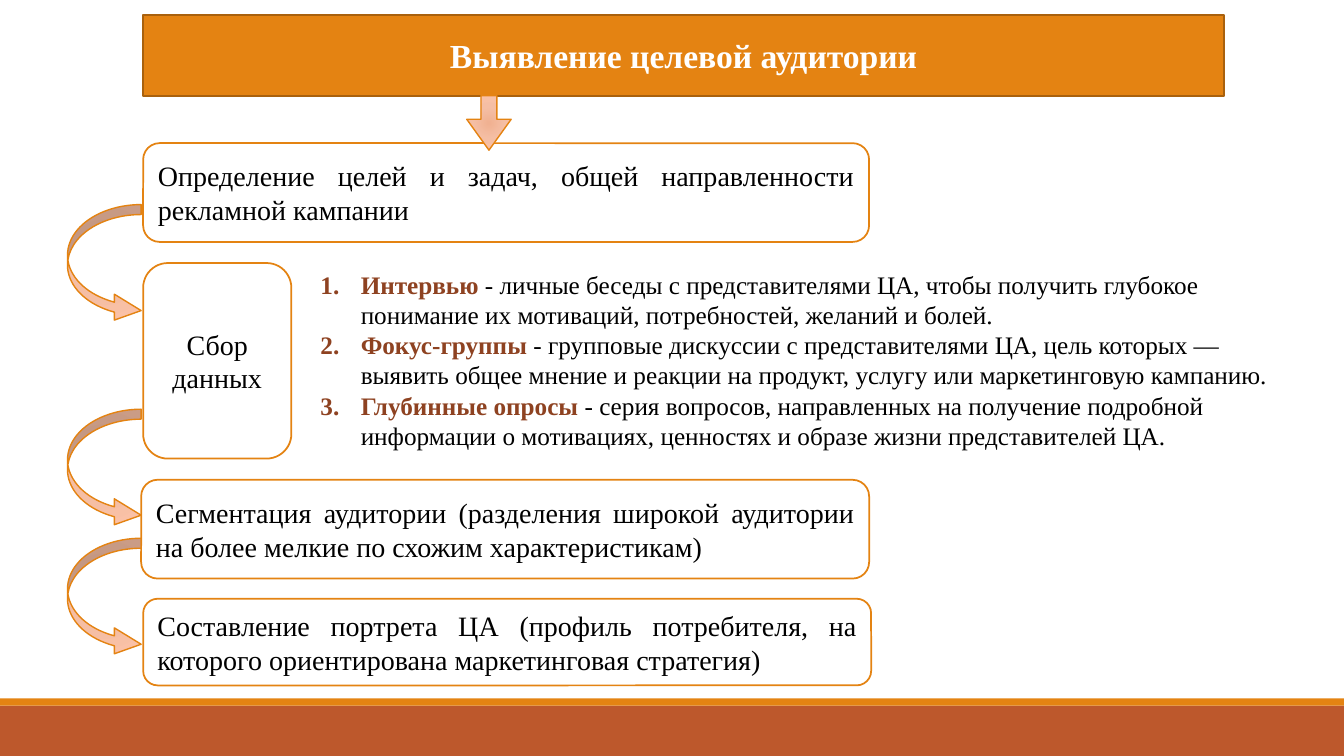
"""Build the slide on finding a target audience."""
from pptx import Presentation
from pptx.dml.color import RGBColor as RGB
from pptx.enum.shapes import MSO_SHAPE as Shape
from pptx.enum.text import MSO_ANCHOR as Anchor, PP_ALIGN as Align
from pptx.oxml import parse_xml
from pptx.util import Inches, Pt

WHITE = RGB(0xFF, 0xFF, 0xFF)
BLACK = RGB(0, 0, 0)
ORANGE = RGB(0xE4, 0x83, 0x12)
EDGE = RGB(0xA9, 0x61, 0x0D)
RUST = RGB(0xBD, 0x58, 0x2C)
BROWN = RGB(0x8E, 0x42, 0x21)
FONT = "Times New Roman"
NS = 'xmlns:a="http://schemas.openxmlformats.org/drawingml/2006/main"'
GLOW = f"""<a:gradFill {NS} rotWithShape="1"><a:gsLst>
<a:gs pos="0"><a:srgbClr val="F0B191"/></a:gs>
<a:gs pos="45000"><a:srgbClr val="F5BEA4"/></a:gs>
<a:gs pos="100000"><a:srgbClr val="FDC3A8"/></a:gs></a:gsLst>
<a:path path="circle"><a:fillToRect l="100000" t="100000" r="100000" b="100000"/></a:path>
</a:gradFill>"""


def write(para, text, size=20, color=BLACK, bold=False):
    run = para.add_run()
    run.text = text
    font = run.font
    font.name, font.size, font.bold = FONT, Pt(size), bold
    font.color.rgb = color


def draw(kind, box, fill=None, line=None, width=1.25):
    shape = slide.shapes.add_shape(kind, *map(Inches, box))
    shape.shadow.inherit = False
    if fill is None:
        shape._element.spPr.insert(2, parse_xml(GLOW))
    else:
        shape.fill.solid()
        shape.fill.fore_color.rgb = fill
    if line is None:
        shape.line.fill.background()
    else:
        shape.line.color.rgb = line
        shape.line.width = Pt(width)
    return shape


deck = Presentation()
deck.slide_width, deck.slide_height = Inches(13.33), Inches(7.5)
slide = deck.slides.add_slide(deck.slide_layouts[6])

draw(Shape.RECTANGLE, (0, 7, 13.33, 0.5), RUST)
draw(Shape.RECTANGLE, (0, 6.93, 13.33, 0.07), ORANGE)

methods = [
    ("Интервью ", "- личные беседы с представителями ЦА, чтобы получить глубокое понимание их мотиваций, потребностей, желаний и болей."),
    ("Фокус-группы ", "- групповые дискуссии с представителями ЦА, цель которых — выявить общее мнение и реакции на продукт, услугу или маркетинговую кампанию."),
    ("Глубинные опросы ", "- серия вопросов, направленных на получение подробной информации о мотивациях, ценностях и образе жизни представителей ЦА."),
]
frame = slide.shapes.add_textbox(
    Inches(3.08), Inches(2.62), Inches(9.73), Inches(1.92)).text_frame
frame.word_wrap = True
for i, (name, note) in enumerate(methods):
    para = frame.add_paragraph() if i else frame.paragraphs[0]
    props = para._p.get_or_add_pPr()
    props.set("marL", str(Inches(0.4)))
    props.set("indent", str(-Inches(0.4)))
    props.append(parse_xml(f'<a:buFont {NS} typeface="+mj-lt"/>'))
    props.append(parse_xml(f'<a:buAutoNum {NS} type="arabicPeriod"/>'))
    write(para, name, size=18, color=BROWN, bold=True)
    write(para, note, size=18)

title = draw(Shape.RECTANGLE, (1.42, 0.15, 10.72, 0.8), ORANGE, EDGE)
title.text_frame.vertical_anchor = Anchor.MIDDLE
para = title.text_frame.paragraphs[0]
para.alignment = Align.CENTER
write(para, "Выявление целевой аудитории", size=24, color=WHITE, bold=True)

steps = [
    ((1.42, 1.42, 7.2, 0.98), Align.JUSTIFY,
     "Определение целей и задач, общей направленности рекламной кампании"),
    ((1.42, 2.61, 1.47, 1.94), Align.CENTER, "Сбор данных"),
    ((1.4, 4.76, 7.22, 0.98), Align.JUSTIFY,
     "Сегментация аудитории (разделения широкой аудитории на более мелкие по схожим характеристикам)"),
    ((1.42, 5.94, 7.22, 0.86), Align.JUSTIFY,
     "Составление портрета ЦА (профиль потребителя, на которого ориентирована маркетинговая стратегия)"),
]
for box, align, text in steps:
    step = draw(Shape.ROUNDED_RECTANGLE, box, WHITE, ORANGE)
    step.text_frame.word_wrap = True
    step.text_frame.vertical_anchor = Anchor.MIDDLE
    para = step.text_frame.paragraphs[0]
    para.alignment = align
    write(para, text)

bends = [(Shape.CURVED_RIGHT_ARROW, (0.67, top, 0.73, 1.18), (0.135, 0.352, 0.363))
         for top in (2.03, 4.06, 5.34)]
down = (Shape.DOWN_ARROW, (4.63, 0.95, 0.44, 0.54), (0.36, 0.695))
for kind, box, bend in bends + [down]:
    arrow = draw(kind, box, line=ORANGE, width=1)
    for i, value in enumerate(bend):
        arrow.adjustments[i] = value

deck.save("out.pptx")
